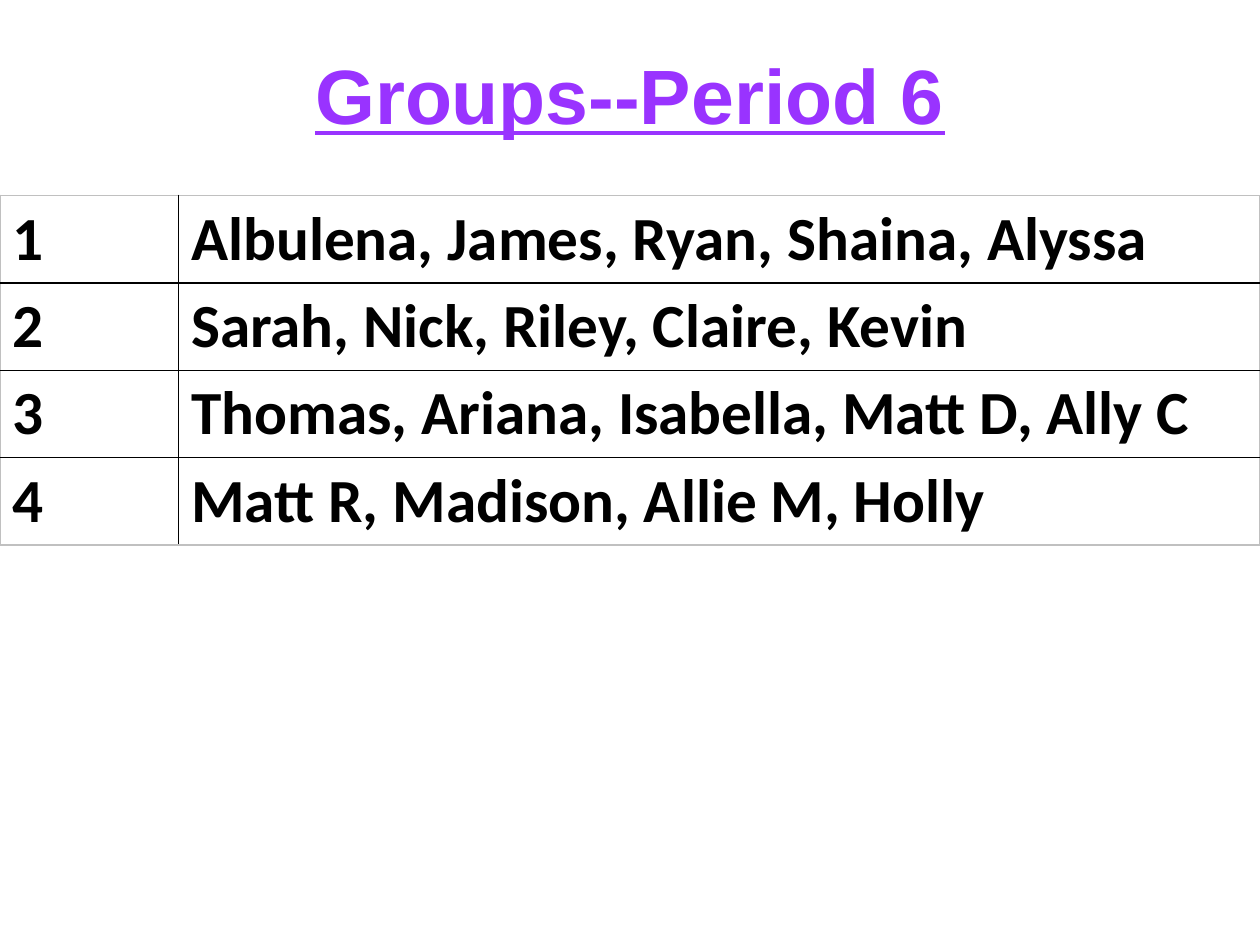
from lxml.etree import SubElement
from pptx import Presentation
from pptx.dml.color import RGBColor
from pptx.enum.text import MSO_ANCHOR, PP_ALIGN
from pptx.oxml.ns import qn
from pptx.util import Cm, Pt

TITLE = "Groups--Period 6"
GROUPS = [
    "Albulena, James, Ryan, Shaina, Alyssa",
    "Sarah, Nick, Riley, Claire, Kevin",
    "Thomas, Ariana, Isabella, Matt D, Ally C",
    "Matt R, Madison, Allie M, Holly",
]

PURPLE = RGBColor(0x99, 0x33, 0xFF)
BLACK = RGBColor(0x00, 0x00, 0x00)
GREY = RGBColor(0xC0, 0xC0, 0xC0)

PAGE_WIDTH, PAGE_HEIGHT = Cm(25.4), Cm(19.05)
NUMBER_WIDTH = Cm(3.6)
ROW_HEIGHT = Cm(1.76)


def style_text(para, font_name, size, color):
    for span in para.runs:
        span.font.name = font_name
        span.font.size = Pt(size)
        span.font.bold = True
        span.font.color.rgb = color


def set_borders(cell, colors):
    """Draw the left, right, top and bottom borders of a cell."""
    properties = cell._tc.get_or_add_tcPr()
    for side, color in zip("LRTB", colors):
        line = SubElement(properties, qn(f"a:ln{side}"), w=str(Pt(1)))
        fill = SubElement(line, qn("a:solidFill"))
        SubElement(fill, qn("a:srgbClr"), val=str(color))


deck = Presentation()
deck.slide_width, deck.slide_height = PAGE_WIDTH, PAGE_HEIGHT
page = deck.slides.add_slide(deck.slide_layouts[6])

# Table of groups: number and members
row_count, column_count = len(GROUPS), 2
table = page.shapes.add_table(
    row_count, column_count, 0, Cm(3.94), PAGE_WIDTH, ROW_HEIGHT * row_count
).table
table.first_row = table.horz_banding = False
table.columns[0].width = NUMBER_WIDTH
table.columns[1].width = PAGE_WIDTH - NUMBER_WIDTH

for row, members in enumerate(GROUPS):
    for column, text in enumerate((str(row + 1), members)):
        cell = table.cell(row, column)
        cell.text_frame.text = text
        style_text(cell.text_frame.paragraphs[0], "Calibri", 35, BLACK)
        # Grey outside, black between cells
        on_edge = (column == 0, column == column_count - 1,
                   row == 0, row == row_count - 1)
        set_borders(cell, [GREY if edge else BLACK for edge in on_edge])
        cell.fill.background()

# Title
box = page.shapes.add_textbox(0, Cm(0.05), PAGE_WIDTH, Cm(3.68))
frame = box.text_frame
frame.word_wrap = True
frame.vertical_anchor = MSO_ANCHOR.MIDDLE
frame.text = TITLE
para = frame.paragraphs[0]
para.alignment = PP_ALIGN.CENTER
style_text(para, "Arial", 44, PURPLE)
para.runs[0].font.underline = True

deck.save("out.pptx")
